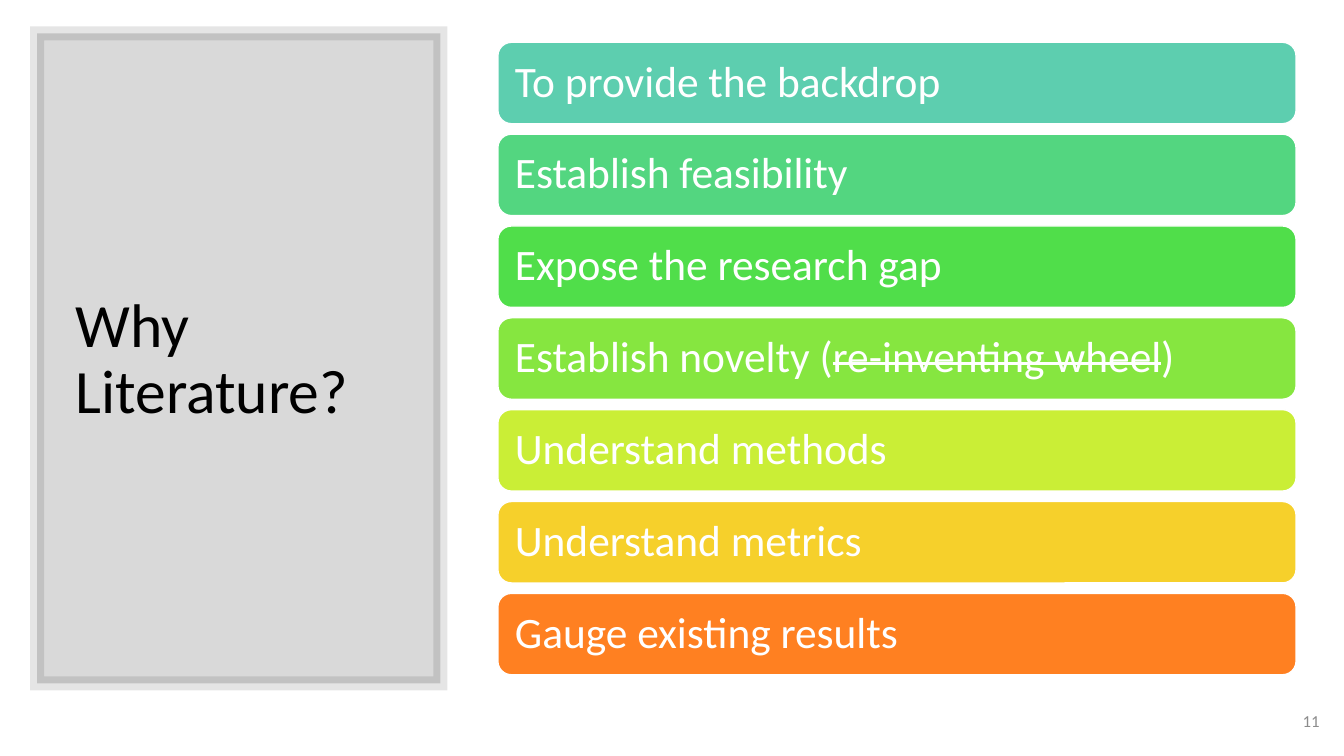
from dataclasses import dataclass

from lxml.etree import SubElement
from pptx import Presentation
from pptx.dml.color import RGBColor
from pptx.enum.shapes import MSO_SHAPE
from pptx.enum.text import MSO_ANCHOR, PP_ALIGN
from pptx.oxml.ns import qn
from pptx.util import Pt


@dataclass(frozen=True)
class Theme:
    font: str = "Calibri"
    black: str = "000000"
    white: str = "FFFFFF"
    gray: str = "8C8C8C"
    title_size: float = 44
    reason_size: float = 31
    number_size: float = 12


def set_all(target, values):
    for name, value in values.items():
        setattr(target, name, value)


def set_color(color_format, color, opacity=None):
    color_format.solid()
    color_format.fore_color.rgb = RGBColor.from_string(color)
    if opacity is not None:
        for element in color_format._xPr.iter(qn("a:srgbClr")):
            SubElement(element, qn("a:alpha"), val=str(opacity * 1000))


class SlideBuilder:
    def __init__(self, slide, theme):
        self.slide = slide
        self.theme = theme

    def fill_text(self, shape, runs, size, color, align=PP_ALIGN.LEFT, spacing=0.9, inset=7.2):
        set_all(shape.text_frame, {
            "word_wrap": True,
            "vertical_anchor": MSO_ANCHOR.MIDDLE,
            "margin_left": Pt(inset),
            "margin_right": Pt(inset),
        })
        paragraph = shape.text_frame.paragraphs[0]
        set_all(paragraph, {"alignment": align, "line_spacing": spacing})
        for text, struck in runs:
            run = paragraph.add_run()
            run.text = text
            set_all(run.font, {"name": self.theme.font, "size": Pt(size)})
            run.font.color.rgb = RGBColor.from_string(color)
            if struck:
                run._r.get_or_add_rPr().set("strike", "sngStrike")

    def text(self, box, text, size, color, **layout):
        shape = self.slide.shapes.add_textbox(*map(Pt, box))
        self.fill_text(shape, [(text, False)], size, color, **layout)

    def shape(self, kind, box, fill, line, line_width, fill_opacity=None, line_opacity=None):
        shape = self.slide.shapes.add_shape(kind, *map(Pt, box))
        shape.shadow.inherit = False
        set_color(shape.fill, fill, fill_opacity)
        shape.line.width = Pt(line_width)
        set_color(shape.line.fill, line, line_opacity)
        return shape

    def panel(self, box):
        black = self.theme.black
        shape = self.shape(MSO_SHAPE.RECTANGLE, box, black, black, 10, 15, 10)
        SubElement(shape.line._get_or_add_ln(), qn("a:miter"), lim="800000")

    def reason(self, box, fill, runs):
        white = self.theme.white
        shape = self.shape(MSO_SHAPE.ROUNDED_RECTANGLE, box, fill, white, 1)
        self.fill_text(shape, runs, self.theme.reason_size, white, inset=9.36)


REASONS = [
    ("5DCEAF", [("To provide the backdrop", False)]),
    ("53D680", [("Establish feasibility", False)]),
    ("50DE4A", [("Expose the research gap", False)]),
    ("86E640", [("Establish novelty (", False), ("re-inventing wheel", True), (")", False)]),
    ("CAEE36", [("Understand methods", False)]),
    ("F6D02B", [("Understand metrics", False)]),
    ("FF8021", [("Gauge existing results", False)]),
]
REASON_TOP = 30.2
REASON_PITCH = 65.6


def main():
    presentation = Presentation()
    set_all(presentation, {"slide_width": Pt(960), "slide_height": Pt(540)})
    slide = presentation.slides.add_slide(presentation.slide_layouts[6])
    theme = Theme()
    builder = SlideBuilder(slide, theme)

    builder.panel((26.6, 23.8, 288, 464.4))
    builder.text((46.8, 50.4, 249.1, 414), "Why Literature?", theme.title_size, theme.black)
    for index, (fill, runs) in enumerate(REASONS):
        top = REASON_TOP + index * REASON_PITCH
        builder.reason((355.6, top, 570.2, 58.2), fill, runs)
    builder.text((733.7, 500.4, 216, 28.8), "11", theme.number_size, theme.gray,
                 align=PP_ALIGN.RIGHT, spacing=1.0)

    presentation.save("out.pptx")


if __name__ == "__main__":
    main()
